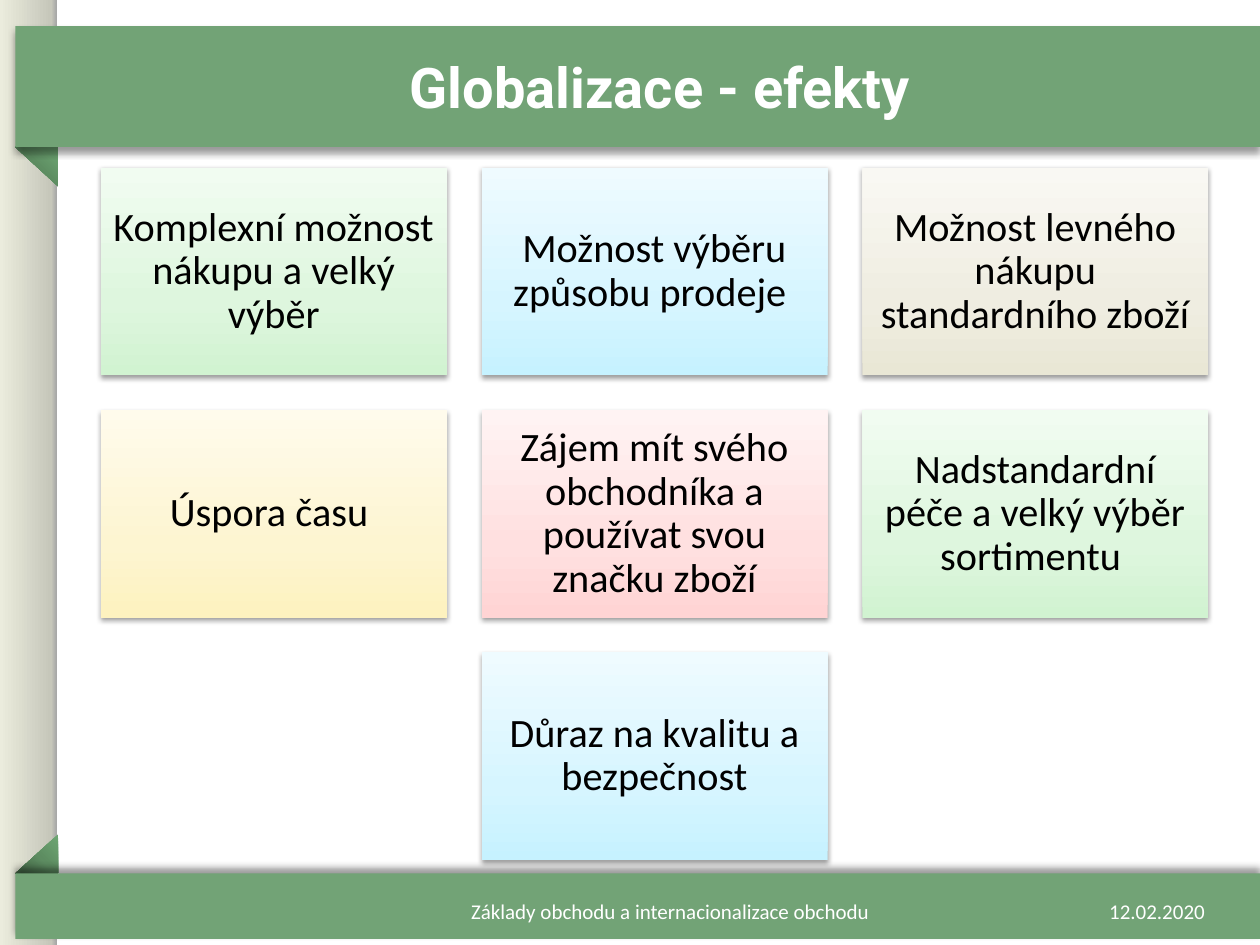
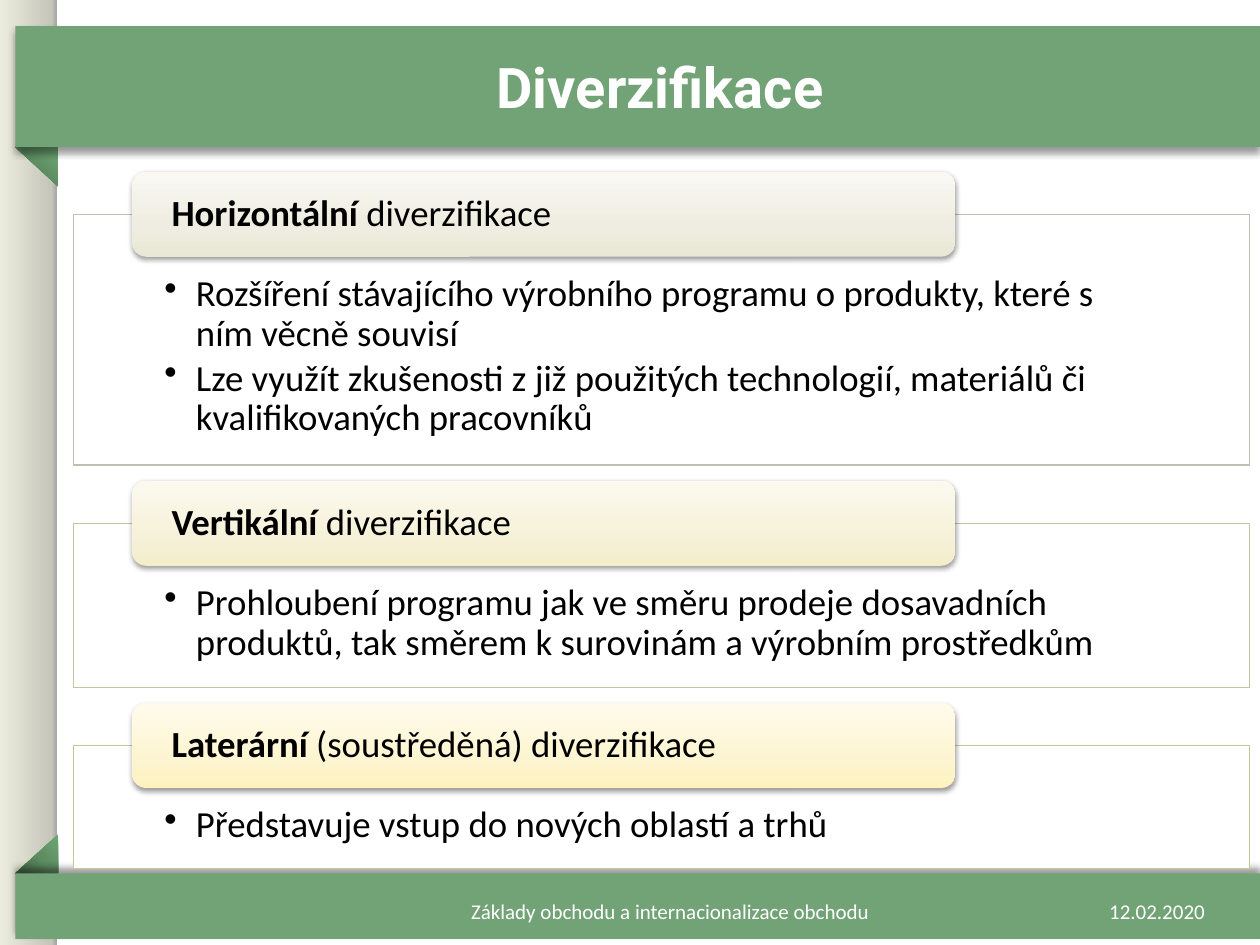
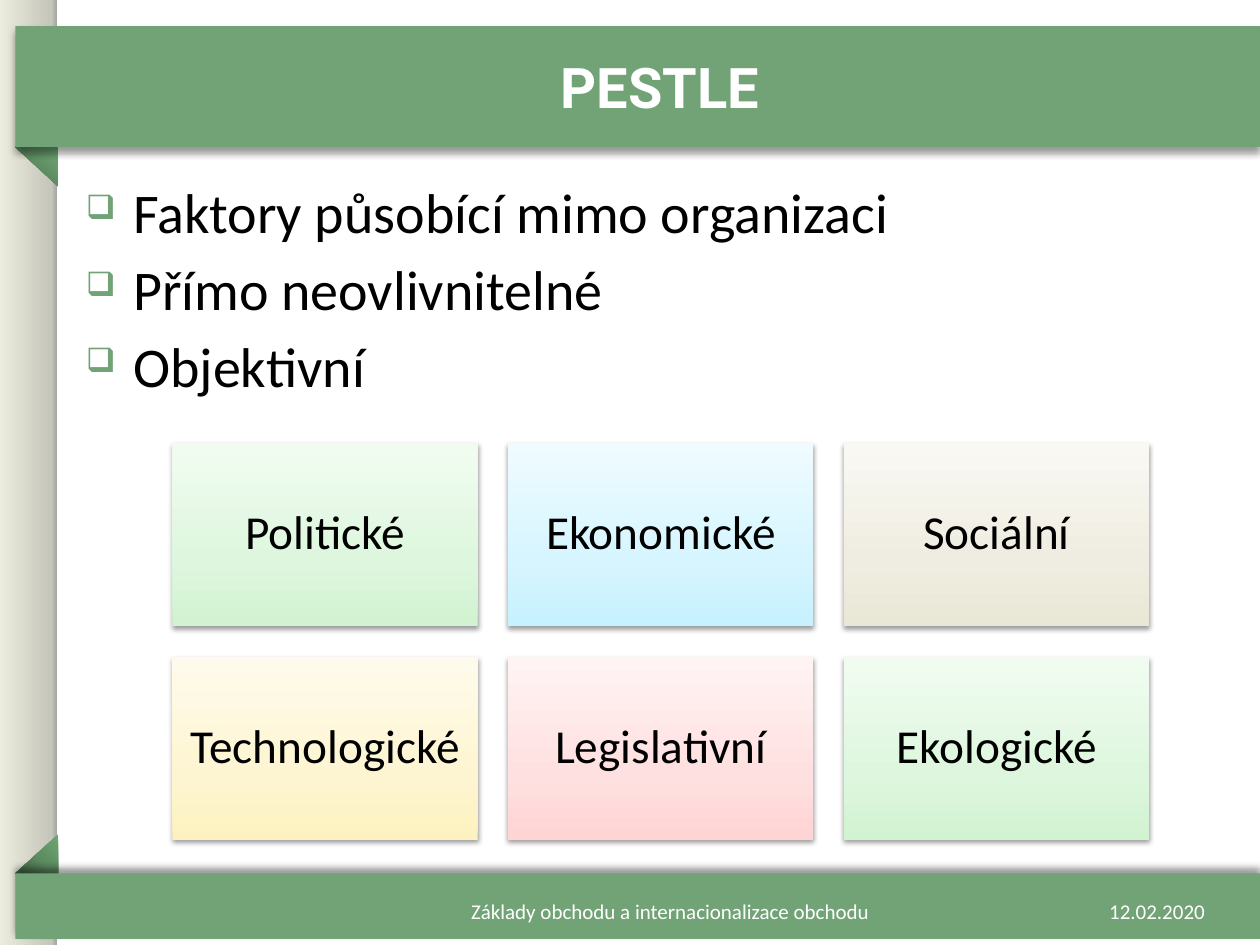
from itertools import cycle

from lxml.etree import SubElement
from pptx import Presentation
from pptx.dml.color import RGBColor
from pptx.enum.shapes import MSO_SHAPE
from pptx.enum.text import MSO_ANCHOR, PP_ALIGN
from pptx.oxml.ns import qn
from pptx.util import Pt

COLORS = {"band": "72A376", "white": "FFFFFF", "text": "000000"}
STRIPE = [(0, "A6A6A6"), (10, "C6C7BA"), (100, "EBECDD")]
FOLD = [(0, "416344"), (50, "5D8C61"), (100, "6EA773")]


def tint(dark, middle, light):
    return [(0, dark), (35, middle), (100, light)]


TINTS = {
    "green": tint("D1F3D1", "DEF6DE", "F1FCF1"),
    "blue": tint("C6F2FF", "D6F5FF", "EFFBFF"),
    "beige": tint("E9E7D5", "EFEDE1", "F9F8F3"),
    "yellow": tint("FDF2BF", "FDF5D1", "FFFBEC"),
    "pink": tint("FFD4D4", "FFE0E0", "FFF3F3"),
    "sand": tint("F3EDCA", "F6F1D9", "FCFAF0"),
}
CARD_TINTS = ["green", "blue", "beige", "yellow", "pink"]

BODY_FONT = "Calibri"
TITLE_FONT = "Roboto"
COURSE = "Základy obchodu a internacionalizace obchodu"
DATE = "12.02.2020"

BAND_LEFT, BAND_WIDTH = 8.8, 711.2
TITLE_TOP, TITLE_HEIGHT = 15, 69
FOOTER_TOP, FOOTER_HEIGHT = 499, 37.5

EFFECTS = [
    "Komplexní možnost nákupu a velký výběr",
    "Možnost výběru způsobu prodeje ",
    "Možnost levného nákupu standardního zboží",
    "Úspora času ",
    "Zájem mít svého obchodníka a používat svou značku zboží",
    "Nadstandardní péče a velký výběr sortimentu ",
    "Důraz na kvalitu a bezpečnost",
]
# strong word, rest of heading, points, panel height, tint, border
DIVERSIFICATIONS = [
    ("Horizontální", " diverzifikace",
     ["Rozšíření stávajícího výrobního programu o produkty, které s ním věcně souvisí",
      "Lze využít zkušenosti z již použitých technologií, materiálů či kvalifikovaných pracovníků"],
     143.4, "beige", "C0BEAF"),
    ("Vertikální", " diverzifikace",
     ["Prohloubení programu jak ve směru prodeje dosavadních produktů, "
      "tak směrem k surovinám a výrobním prostředkům"],
     93.8, "sand", "C7C2A3"),
    ("Laterární", " (soustředěná) diverzifikace",
     ["Představuje vstup do nových oblastí a trhů"],
     70.5, "yellow", "CEC597"),
]
TRAITS = ["Faktory působící mimo organizaci", "Přímo neovlivnitelné", "Objektivní"]
FACTORS = ["Politické", "Ekonomické", "Sociální",
           "Technologické", "Legislativní", "Ekologické"]


def add_plain(slide, kind, left, top, width, height, fill=None):
    """Add a preset shape without line or shadow."""
    shape = slide.shapes.add_shape(kind, Pt(left), Pt(top), Pt(width), Pt(height))
    shape.shadow.inherit = False
    shape.line.fill.background()
    if fill:
        shape.fill.solid()
        shape.fill.fore_color.rgb = RGBColor.from_string(fill)
    return shape


def add_color(parent, color):
    return SubElement(parent, qn("a:srgbClr"), val=color)


def set_gradient(shape, stops, angle=None):
    """Fill with stops; without an angle the gradient spreads from the lower left."""
    properties = shape.element.spPr
    gradient = SubElement(properties, qn("a:gradFill"), rotWithShape="1")
    stop_list = SubElement(gradient, qn("a:gsLst"))
    for position, color in stops:
        add_color(SubElement(stop_list, qn("a:gs"), pos=str(position * 1000)), color)
    if angle is None:
        spread = SubElement(gradient, qn("a:path"), path="circle")
        SubElement(spread, qn("a:fillToRect"), t="100000", r="100000")
    else:
        SubElement(gradient, qn("a:lin"), ang=str(angle * 60000), scaled="0")
    properties.find(qn("a:prstGeom")).addnext(gradient)


def set_shadow(shape, opacity, blur, distance, angle):
    effects = shape.element.spPr.find(qn("a:effectLst"))
    shadow = SubElement(effects, qn("a:outerShdw"), blurRad=str(Pt(blur)),
                        dist=str(Pt(distance)), dir=str(angle * 60000), rotWithShape="0")
    SubElement(add_color(shadow, COLORS["text"]), qn("a:alpha"), val=str(opacity * 1000))


def set_frame(frame, anchor, left=7.2, top=3.6, right=7.2, bottom=3.6):
    frame.word_wrap = True
    frame.vertical_anchor = anchor
    frame.margin_left, frame.margin_top = Pt(left), Pt(top)
    frame.margin_right, frame.margin_bottom = Pt(right), Pt(bottom)


def style(paragraph, size, color="text", font=BODY_FONT, align=PP_ALIGN.LEFT, bold=False):
    paragraph.alignment = align
    for run in paragraph.runs:
        run.font.name = font
        run.font.size = Pt(size)
        run.font.bold = bold
        run.font.color.rgb = RGBColor.from_string(COLORS[color])


def set_bullet(paragraph, mark, indent, color=None, percent=100):
    properties = paragraph._p.get_or_add_pPr()
    properties.set("marL", str(Pt(indent)))
    properties.set("indent", str(-Pt(indent)))
    if color:
        add_color(SubElement(properties, qn("a:buClr")), color)
    SubElement(properties, qn("a:buSzPct"), val=str(percent * 1000))
    SubElement(properties, qn("a:buChar"), char=mark)


def write_bullets(frame, lines, size, mark, indent, color=None, percent=100):
    frame.text = "\n".join(lines)
    for paragraph in frame.paragraphs:
        set_bullet(paragraph, mark, indent, color, percent)
        style(paragraph, size)


def add_fold(slide, left, top, width, height, rotation=0):
    fold = add_plain(slide, MSO_SHAPE.RIGHT_TRIANGLE, left, top, width, height)
    set_gradient(fold, FOLD)
    fold.rotation = rotation
    fold.element.spPr.find(qn("a:xfrm")).set("flipH", "1")
    return fold


def add_band(slide, top, height, shadow_angle):
    band = add_plain(slide, MSO_SHAPE.RECTANGLE, BAND_LEFT, top, BAND_WIDTH, height,
                     COLORS["band"])
    set_shadow(band, 40, 4, 3, shadow_angle)
    return band


def decorate_layout(layout, slide):
    """Draw the stripe, folds and bands, and hand them to the shared layout."""
    stripe = add_plain(slide, MSO_SHAPE.RECTANGLE, 0, 0, 32.5, 540)
    set_gradient(stripe, STRIPE, 180)
    decorations = [
        stripe,
        add_fold(slide, 9.6, 83, 22.4, 24.4, rotation=270),
        add_band(slide, TITLE_TOP, TITLE_HEIGHT, 90),
        add_fold(slide, BAND_LEFT, 476.8, 24.4, 22.4),
        add_band(slide, FOOTER_TOP, FOOTER_HEIGHT, 270),
    ]
    for order, decoration in enumerate(decorations):
        decoration.element.nvSpPr.cNvPr.set("id", str(100 + order))
        layout.shapes.element.insert(2 + order, decoration.element)


def set_title(slide, text):
    title = slide.shapes.title
    title.left, title.top = Pt(62.6), Pt(TITLE_TOP)
    title.width, title.height = Pt(629.3), Pt(TITLE_HEIGHT)
    title.text_frame.text = text
    set_frame(title.text_frame, MSO_ANCHOR.MIDDLE)
    style(title.text_frame.paragraphs[0], 32, "white", TITLE_FONT, PP_ALIGN.CENTER, True)


def add_footer_text(slide, text, left, width, align):
    box = slide.shapes.add_textbox(Pt(left), Pt(506.2), Pt(width), Pt(28.8))
    box.text_frame.text = text
    set_frame(box.text_frame, MSO_ANCHOR.MIDDLE)
    style(box.text_frame.paragraphs[0], 12, "white", align=align)


def finish_slide(slide, title):
    set_title(slide, title)
    add_footer_text(slide, COURSE, 249.1, 267.8, PP_ALIGN.CENTER)
    add_footer_text(slide, DATE, 527.8, 167.8, PP_ALIGN.RIGHT)


def add_tinted(slide, kind, left, top, width, height, tint_name):
    shape = add_plain(slide, kind, left, top, width, height)
    set_gradient(shape, TINTS[tint_name], 270)
    set_shadow(shape, 38, 3.1, 1.6, 90)
    return shape


def add_cards(slide, labels, left, top, width, size, inset, columns=3):
    """Lay out cards in rows, with a short last row centred."""
    height, gap = 0.6 * width, 0.1 * width
    for index, (label, tint_name) in enumerate(zip(labels, cycle(CARD_TINTS))):
        row, column = divmod(index, columns)
        in_row = min(columns, len(labels) - row * columns)
        column += (columns - in_row) / 2
        card = add_tinted(slide, MSO_SHAPE.RECTANGLE, left + column * (width + gap),
                          top + row * (height + gap), width, height, tint_name)
        set_frame(card.text_frame, MSO_ANCHOR.MIDDLE, inset, inset, inset, inset)
        card.text_frame.text = label
        paragraph = card.text_frame.paragraphs[0]
        style(paragraph, size, align=PP_ALIGN.CENTER)
        paragraph.line_spacing = 0.9


def add_panel(slide, top, height, points, border):
    panel = add_plain(slide, MSO_SHAPE.RECTANGLE, 42, top, 672, height, COLORS["white"])
    panel.line.color.rgb = RGBColor.from_string(border)
    panel.line.width = Pt(0.75)
    set_frame(panel.text_frame, MSO_ANCHOR.TOP, 52, 34.6, 52, 11.5)
    write_bullets(panel.text_frame, points, 21, "•", 18)
    for paragraph in panel.text_frame.paragraphs:
        paragraph.line_spacing = 0.9
        paragraph.space_after = Pt(3)


def add_heading(slide, panel_top, strong, rest, tint_name):
    """Put a heading tab astride the upper edge of a panel."""
    height = 48.7
    heading = add_tinted(slide, MSO_SHAPE.ROUNDED_RECTANGLE, 75.5, panel_top - height / 2,
                         470.4, height, tint_name)
    set_frame(heading.text_frame, MSO_ANCHOR.MIDDLE, 20.2, 0, 20.2, 0)
    paragraph = heading.text_frame.paragraphs[0]
    for part in (strong, rest):
        paragraph.add_run().text = part
    style(paragraph, 21)
    paragraph.runs[0].font.bold = True
    paragraph.line_spacing = 0.9


def add_diversifications(slide):
    top, gap = 122.4, 33.2
    for strong, rest, points, height, tint_name, border in DIVERSIFICATIONS:
        add_panel(slide, top, height, points, border)
        add_heading(slide, top, strong, rest, tint_name)
        top += height + gap


def add_traits(slide):
    box = slide.shapes.add_textbox(Pt(42), Pt(98), Pt(672), Pt(140))
    set_frame(box.text_frame, MSO_ANCHOR.TOP)
    write_bullets(box.text_frame, TRAITS, 32, "❑", 27, COLORS["band"], 60)
    for paragraph in box.text_frame.paragraphs[1:]:
        paragraph.space_before = Pt(5.5)


def main():
    deck = Presentation()
    deck.slide_width, deck.slide_height = Pt(720), Pt(540)
    layout = deck.slide_layouts[5]
    effects, diversification, pestle = [deck.slides.add_slide(layout) for _ in range(3)]
    decorate_layout(layout, effects)

    finish_slide(effects, "Globalizace - efekty")
    add_cards(effects, EFFECTS, left=57.6, top=95.8, width=197.8, size=23, inset=7)

    finish_slide(diversification, "Diverzifikace")
    add_diversifications(diversification)

    finish_slide(pestle, "PESTLE")
    add_traits(pestle)
    add_cards(pestle, FACTORS, left=98.6, top=253.2, width=174.4, size=27, inset=8)

    deck.save("out.pptx")


if __name__ == "__main__":
    main()
